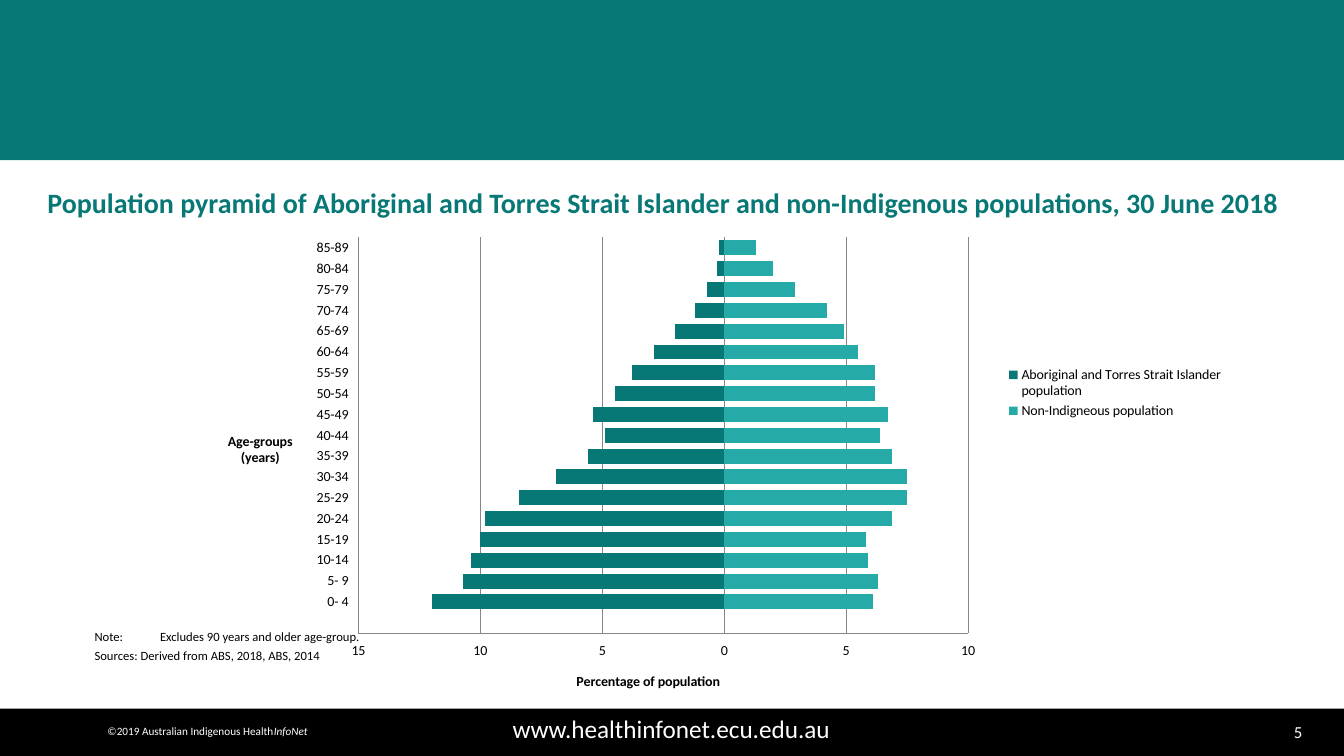
from dataclasses import dataclass
from typing import Any, Optional

from lxml import etree
from pptx import Presentation
from pptx.chart.data import CategoryChartData
from pptx.dml.color import RGBColor
from pptx.enum.chart import XL_CHART_TYPE, XL_LEGEND_POSITION, XL_TICK_LABEL_POSITION, XL_TICK_MARK
from pptx.enum.shapes import MSO_SHAPE
from pptx.enum.text import MSO_ANCHOR, PP_ALIGN
from pptx.oxml.ns import qn
from pptx.util import Pt

LEFT, CENTER, RIGHT, JUSTIFY = PP_ALIGN.LEFT, PP_ALIGN.CENTER, PP_ALIGN.RIGHT, PP_ALIGN.JUSTIFY
MIDDLE = MSO_ANCHOR.MIDDLE
RECTANGLE = MSO_SHAPE.RECTANGLE
BAR_STACKED = XL_CHART_TYPE.BAR_STACKED
LEGEND_RIGHT = XL_LEGEND_POSITION.RIGHT
LABELS_LOW = XL_TICK_LABEL_POSITION.LOW
NO_TICKS = XL_TICK_MARK.NONE

FONT = "Calibri"
TITLE_ONLY = 5
COLORS = {"teal": "087876", "aqua": "26AAA7", "black": "000000", "white": "FFFFFF", "grid": "868686"}

AGE_GROUPS = ["", "0- 4", "5- 9"] + [f"{age}-{age + 4}" for age in range(10, 90, 5)]


@dataclass
class Band:
    left: float
    top: float
    width: float
    height: float
    color: str


@dataclass
class Label:
    left: float
    top: float
    width: float
    height: float
    runs: list[str]
    size: float
    align: PP_ALIGN
    wrap: bool = True


@dataclass
class Population:
    name: str
    color: str
    percentages: list[Optional[float]]


BANDS = [
    Band(-2, 0, 962, 114.5, "teal"),
    Band(0, 506.2, 960, 33.8, "black"),
]
FOOTER_LABELS = [
    Label(860.4, 512, 77, 21.6, ["5"], 12, RIGHT),
    Label(44.6, 506.2, 869.8, 28, ["www.healthinfonet.ecu.edu.au"], 18, CENTER),
    Label(68.4, 514, 159.8, 17.3, ["©2019 Australian Indigenous Health", "InfoNet"], 8, CENTER, False),
]
POPULATIONS = [
    Population("Aboriginal and Torres Strait Islander population", "teal",
               [None, -12, -10.7, -10.4, -10, -9.8, -8.4, -6.9, -5.6, -4.9, -5.4, -4.5,
                -3.8, -2.9, -2, -1.2, -0.7, -0.3, -0.2]),
    Population("Non-Indigneous population", "aqua",
               [None, 6.1, 6.3, 5.9, 5.8, 6.9, 7.5, 7.5, 6.9, 6.4, 6.7, 6.2,
                6.2, 5.5, 4.9, 4.2, 2.9, 2, 1.3]),
]


def rgb(name: str) -> RGBColor:
    return RGBColor.from_string(COLORS[name])


def format_font(font: Any, size: float, color: str, bold: bool = False) -> None:
    font.name, font.size, font.bold = FONT, Pt(size), bold
    font.color.rgb = rgb(color)


def add_band(slide: Any, band: Band) -> None:
    shape = slide.shapes.add_shape(RECTANGLE, Pt(band.left), Pt(band.top), Pt(band.width), Pt(band.height))
    shape.shadow.inherit = False
    shape.fill.solid()
    shape.fill.fore_color.rgb = rgb(band.color)
    shape.line.fill.background()


def add_label(slide: Any, label: Label) -> None:
    box = slide.shapes.add_textbox(Pt(label.left), Pt(label.top), Pt(label.width), Pt(label.height))
    box.text_frame.word_wrap = label.wrap
    paragraph = box.text_frame.paragraphs[0]
    paragraph.alignment = label.align
    for index, text in enumerate(label.runs):
        run = paragraph.add_run()
        run.text = text
        format_font(run.font, label.size, "white")
        if index:
            run.font.italic = True


def format_title(slide: Any) -> None:
    title = slide.shapes.title
    title.left, title.top, title.width, title.height = Pt(26.6), Pt(116), Pt(908), Pt(59.8)
    frame = title.text_frame
    frame.text = ("Population pyramid of Aboriginal and Torres Strait Islander "
                  "and non-Indigenous populations, 30 June 2018")
    frame.word_wrap = True
    frame.vertical_anchor = MIDDLE
    paragraph = frame.paragraphs[0]
    paragraph.alignment = LEFT
    paragraph.line_spacing = 0.9
    format_font(paragraph.runs[0].font, 20, "teal", True)


def add_tabs(paragraph: Any, positions: list[float]) -> None:
    tabs = etree.SubElement(paragraph._p.get_or_add_pPr(), qn("a:tabLst"))
    for position in positions:
        etree.SubElement(tabs, qn("a:tab"), pos=str(Pt(position)), algn="l")


def add_notes_box(slide: Any) -> None:
    frame = slide.shapes.add_textbox(Pt(60.5), Pt(445.7), Pt(873.4), Pt(57.6)).text_frame
    frame.word_wrap = True
    frame.text = "Note:\tExcludes 90 years and older age-group.\nSources: Derived from ABS, 2018, ABS, 2014"
    note, sources = frame.paragraphs
    add_tabs(note, [36, 46.8])
    add_tabs(sources, [48.2])
    properties = note._p.get_or_add_pPr()
    properties.set("marL", str(Pt(46.8)))
    properties.set("indent", str(-Pt(46.8)))
    note.space_after, sources.space_after = Pt(3), Pt(5)
    sources.alignment = JUSTIFY
    for paragraph in frame.paragraphs:
        format_font(paragraph.runs[0].font, 9, "black")


def place(element: Any, inner: bool = False, **fractions: float) -> None:
    """Give a chart part a manual layout in fractions of the chart size."""
    for old in element.findall(qn("c:layout")):
        element.remove(old)
    layout = etree.Element(qn("c:layout"))
    manual = etree.SubElement(layout, qn("c:manualLayout"))
    if inner:
        etree.SubElement(manual, qn("c:layoutTarget"), val="inner")
    for key in ("x", "y"):
        etree.SubElement(manual, qn(f"c:{key}Mode"), val="edge")
    for key, value in fractions.items():
        etree.SubElement(manual, qn(f"c:{key}"), val=str(value))
    overlay = element.find(qn("c:overlay"))
    if overlay is None:
        element.insert(0, layout)
    else:
        overlay.addprevious(layout)


def format_axis(axis: Any, text: str, x: float, y: float) -> None:
    axis.major_tick_mark = axis.minor_tick_mark = NO_TICKS
    axis.tick_label_position = LABELS_LOW
    axis.format.line.color.rgb = rgb("grid")
    axis.format.line.width = Pt(0.75)
    frame = axis.axis_title.text_frame
    frame.text = text
    frame._txBody.bodyPr.set("rot", "0")
    for paragraph in frame.paragraphs:
        format_font(paragraph.runs[0].font, 10, "black", True)
    place(axis.axis_title._element, x=x, y=y)


def add_pyramid(slide: Any) -> None:
    data = CategoryChartData(number_format="0;0")
    data.categories = AGE_GROUPS
    for population in POPULATIONS:
        data.add_series(population.name, population.percentages)
    chart = slide.shapes.add_chart(BAR_STACKED, Pt(157), Pt(60.5), Pt(739.4), Pt(434.9), data).chart
    chart.has_title = False
    format_font(chart.font, 10, "black")
    plot = chart.plots[0]
    plot.gap_width, plot.overlap, plot.vary_by_categories = 39, 100, False
    for series, population in zip(plot.series, POPULATIONS):
        series.invert_if_negative = False
        series.format.fill.solid()
        series.format.fill.fore_color.rgb = rgb(population.color)

    ages, percentages = chart.category_axis, chart.value_axis
    format_axis(ages, "Age-groups\n(years)", 0.005, 0.57)
    ages.has_major_gridlines = False
    format_axis(percentages, "Percentage of population", 0.342, 0.968)
    percentages.minimum_scale, percentages.maximum_scale, percentages.major_unit = -15, 10, 5
    percentages.tick_labels.number_format = "0;0"
    percentages.tick_labels.number_format_is_linked = False
    percentages.has_major_gridlines = True
    percentages.major_gridlines.format.line.color.rgb = rgb("grid")
    percentages.major_gridlines.format.line.width = Pt(0.75)

    chart.has_legend = True
    chart.legend.position = LEGEND_RIGHT
    chart.legend.include_in_layout = False
    place(chart.legend._element, x=0.75, y=0.46, w=0.23, h=0.1)
    place(chart._chartSpace.find(".//" + qn("c:plotArea")), inner=True, x=0.134, y=0.253, w=0.589, h=0.655)


def main() -> None:
    presentation = Presentation()
    presentation.slide_width, presentation.slide_height = Pt(960), Pt(540)
    slide = presentation.slides.add_slide(presentation.slide_layouts[TITLE_ONLY])
    for band in BANDS:
        add_band(slide, band)
    for label in FOOTER_LABELS:
        add_label(slide, label)
    format_title(slide)
    add_notes_box(slide)
    add_pyramid(slide)
    presentation.save("out.pptx")


if __name__ == "__main__":
    main()
